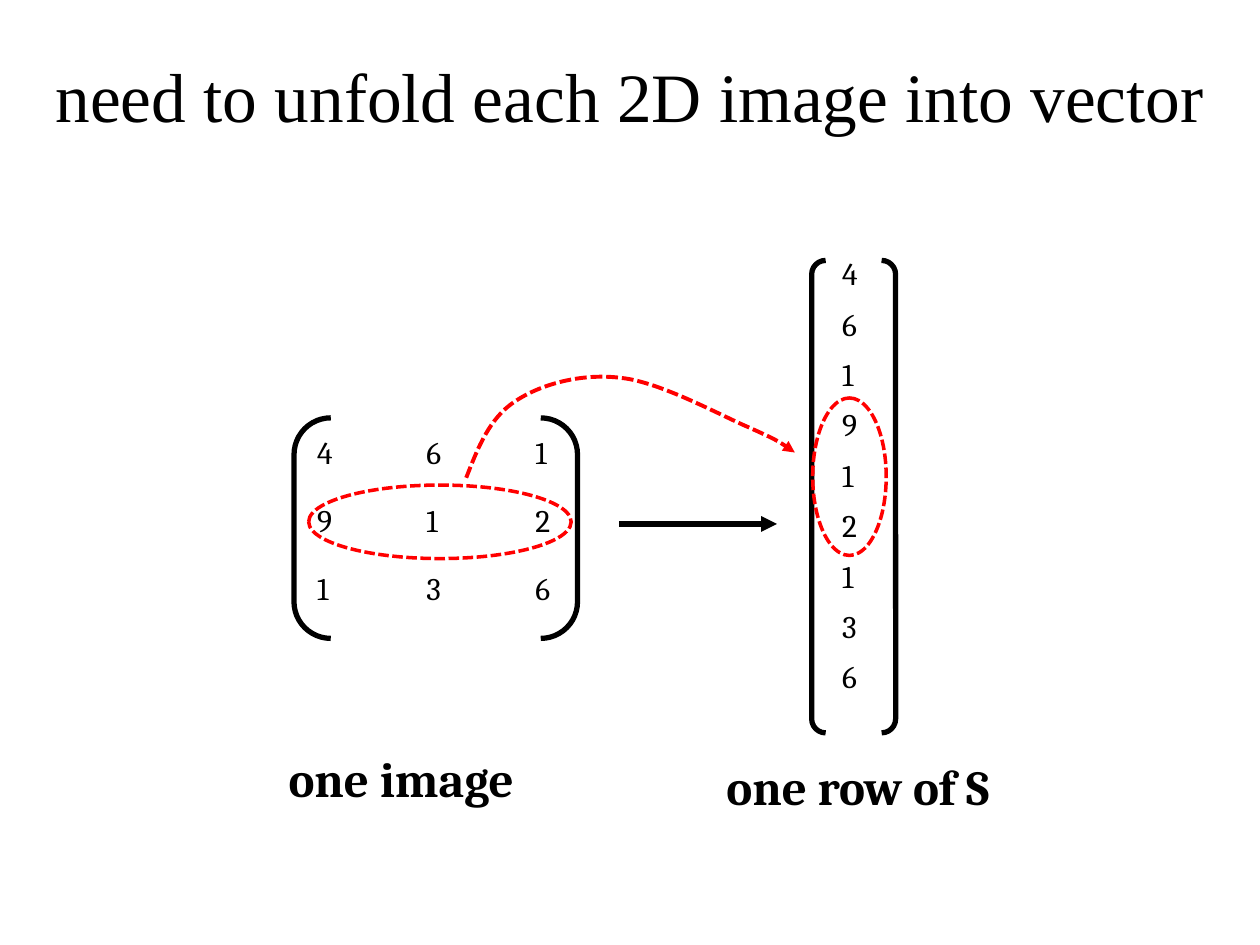
import dataclasses
import typing

import pptx
import pptx.dml.color
import pptx.enum.dml
import pptx.enum.shapes
import pptx.enum.text
import pptx.oxml
import pptx.oxml.ns
import pptx.util

SHAPES = pptx.enum.shapes.MSO_SHAPE
ALIGN = pptx.enum.text.PP_ALIGN
COLORS = {"ink": "000000", "highlight": "FF0000"}
BODY_FONT = "Cambria"
TITLE_FONT = "Times New Roman"
GRID_COLUMNS = 120
SLIDE_WIDTH = pptx.util.Inches(10)
SLIDE_HEIGHT = pptx.util.Inches(7.5)
CELL = SLIDE_WIDTH / GRID_COLUMNS
PIXELS = [["4", "6", "1"], ["9", "1", "2"], ["1", "3", "6"]]


@dataclasses.dataclass(frozen=True)
class Frame:
    column: float
    row: float
    columns: float
    rows: float

    def lengths(self) -> list[int]:
        return [grid(value) for value in dataclasses.astuple(self)]


@dataclasses.dataclass(frozen=True)
class Matrix:
    values: list[list[str]]
    frame: Frame
    bracket: Frame
    header: bool


@dataclasses.dataclass(frozen=True)
class Ring:
    frame: Frame
    rotation: float


@dataclasses.dataclass(frozen=True)
class Caption:
    text: str
    frame: Frame


MATRICES = [
    Matrix(PIXELS, Frame(29, 40.9, 31.2, 19.5), Frame(28, 39.8, 27, 21), True),
    Matrix([[value] for row in PIXELS for value in row],
           Frame(79, 23.9, 10.4, 43.2), Frame(77.3, 24.8, 8, 45), False),
]
RINGS = [Ring(Frame(29.4, 46.2, 25, 7), 0), Ring(Frame(73.4, 41.9, 15, 7), 90)]
CAPTIONS = [
    Caption("one row of S", Frame(68, 71.5, 40, 6.8)),
    Caption("one image", Frame(26.3, 70.7, 40, 6.8)),
]
CURVE = [
    (44.4, 45.5),
    (45.5, 42.7), (46.6, 39.8), (49.1, 38.2),
    (51.5, 36.6), (55.4, 35.5), (59.2, 36),
    (62.9, 36.4), (68.5, 39.5), (71.3, 40.7),
    (74, 41.9), (74.9, 42.5), (75.7, 43.1),
]


def grid(value: float) -> int:
    return round(value * CELL)


def color(name: str) -> pptx.dml.color.RGBColor:
    return pptx.dml.color.RGBColor.from_string(COLORS[name])


def write(text_frame: typing.Any, text: str, *, size: float, font: str = BODY_FONT,
          bold: bool = False, align: typing.Any = ALIGN.LEFT) -> None:
    paragraph = text_frame.paragraphs[0]
    paragraph.alignment = align
    run = paragraph.add_run()
    run.text = text
    run.font.name = font
    run.font.size = pptx.util.Pt(size)
    run.font.bold = bold
    run.font.color.rgb = color("ink")


def style_line(line: typing.Any, name: str, width: float, dashed: bool = False) -> None:
    line.color.rgb = color(name)
    line.width = pptx.util.Pt(width)
    if dashed:
        line.dash_style = pptx.enum.dml.MSO_LINE.SQUARE_DOT


def add_arrowhead(line: typing.Any) -> None:
    tail = pptx.oxml.parse_xml(f'<a:tailEnd {pptx.oxml.ns.nsdecls("a")} type="triangle"/>')
    line._get_or_add_ln().append(tail)


def add_outline(slide: typing.Any, kind: typing.Any, frame: Frame, name: str,
                width: float, dashed: bool = False) -> typing.Any:
    shape = slide.shapes.add_shape(kind, *frame.lengths())
    shape.shadow.inherit = False
    shape.fill.background()
    style_line(shape.line, name, width, dashed)
    return shape


def add_matrix(slide: typing.Any, matrix: Matrix) -> None:
    row_count, column_count = len(matrix.values), len(matrix.values[0])
    table = slide.shapes.add_table(row_count, column_count, *matrix.frame.lengths()).table
    table.first_row = matrix.header
    table.horz_banding = False
    for row_index, values in enumerate(matrix.values):
        for column_index, value in enumerate(values):
            cell = table.cell(row_index, column_index)
            cell.fill.background()
            write(cell.text_frame, value, size=18)
    add_outline(slide, SHAPES.DOUBLE_BRACKET, matrix.bracket, "ink", 3)


def add_arrow(slide: typing.Any, start: tuple[float, float], end: tuple[float, float]) -> None:
    connector = slide.shapes.add_connector(
        pptx.enum.shapes.MSO_CONNECTOR.STRAIGHT, *map(grid, start + end))
    connector._element.spPr.append(
        pptx.oxml.parse_xml(f'<a:effectLst {pptx.oxml.ns.nsdecls("a")}/>'))
    style_line(connector.line, "ink", 3)
    add_arrowhead(connector.line)


def add_curve(slide: typing.Any, points: list[tuple[float, float]]) -> None:
    start, *controls = [(grid(column), grid(row)) for column, row in points]
    builder = slide.shapes.build_freeform(*start)
    builder.add_line_segments(controls, close=False)
    shape = builder.convert_to_shape()
    segments = shape._element.findall(".//" + pptx.oxml.ns.qn("a:lnTo"))
    outline = segments[0].getparent()
    for index in range(0, len(segments), 3):
        curve = pptx.oxml.parse_xml(f'<a:cubicBezTo {pptx.oxml.ns.nsdecls("a")}/>')
        for segment in segments[index:index + 3]:
            curve.append(segment[0])
            outline.remove(segment)
        outline.append(curve)
    shape.shadow.inherit = False
    shape.fill.background()
    style_line(shape.line, "highlight", 2.25, dashed=True)
    add_arrowhead(shape.line)


def add_caption(slide: typing.Any, caption: Caption) -> None:
    text_frame = slide.shapes.add_textbox(*caption.frame.lengths()).text_frame
    text_frame.word_wrap = True
    text_frame.auto_size = pptx.enum.text.MSO_AUTO_SIZE.SHAPE_TO_FIT_TEXT
    write(text_frame, caption.text, size=28, bold=True)


def set_title(slide: typing.Any, text: str, frame: Frame) -> None:
    title = slide.shapes.title
    title.left, title.top, title.width, title.height = frame.lengths()
    title.text_frame.auto_size = pptx.enum.text.MSO_AUTO_SIZE.NONE
    title.text_frame.vertical_anchor = pptx.enum.text.MSO_ANCHOR.MIDDLE
    write(title.text_frame, text, size=39.6, font=TITLE_FONT, align=ALIGN.CENTER)


def main() -> None:
    presentation = pptx.Presentation()
    presentation.slide_width = SLIDE_WIDTH
    presentation.slide_height = SLIDE_HEIGHT
    slide = presentation.slides.add_slide(presentation.slide_layouts[5])
    set_title(slide, "need to unfold each 2D image into vector", Frame(0, 4, GRID_COLUMNS, 10))
    for matrix in MATRICES:
        add_matrix(slide, matrix)
    add_arrow(slide, (59, 49.9), (74, 49.9))
    for ring in RINGS:
        shape = add_outline(slide, SHAPES.OVAL, ring.frame, "highlight", 2, dashed=True)
        shape.rotation = ring.rotation
    add_curve(slide, CURVE)
    for caption in CAPTIONS:
        add_caption(slide, caption)
    presentation.save("out.pptx")


if __name__ == "__main__":
    main()
